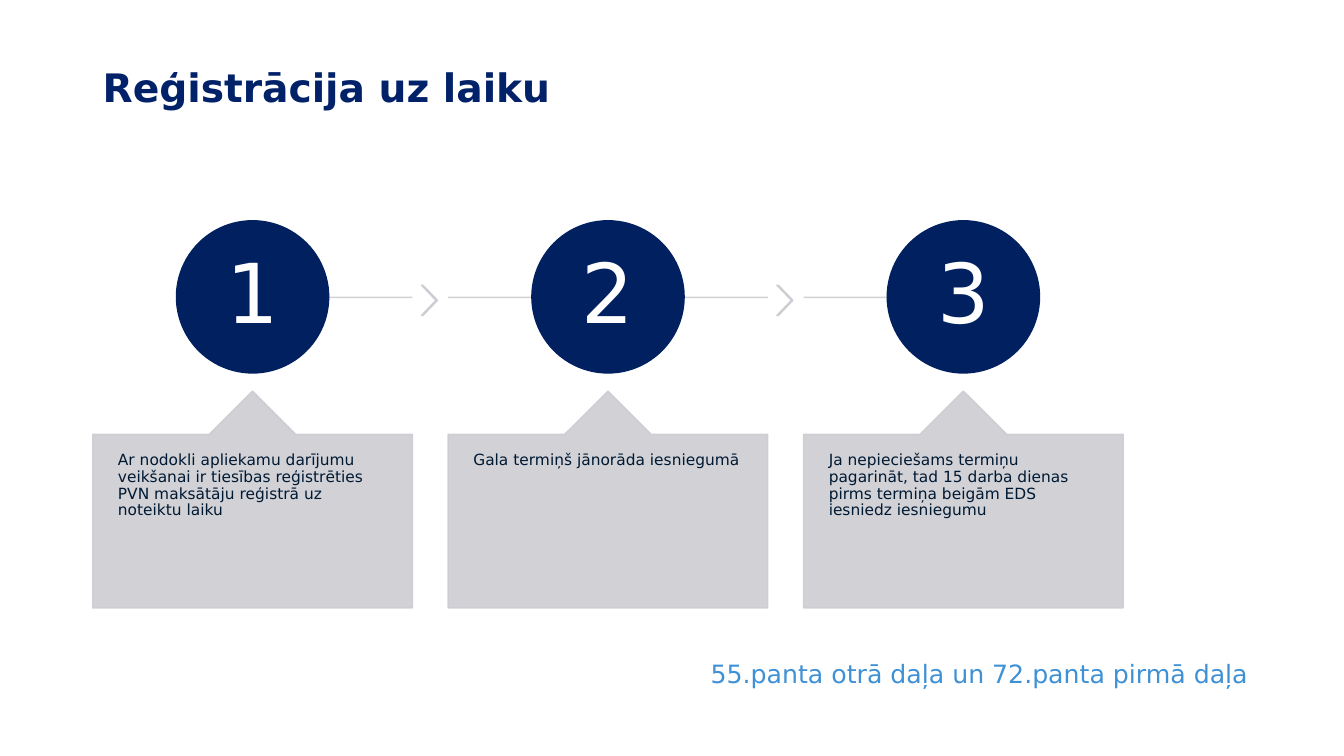
from lxml import etree
from pptx import Presentation
from pptx.dml.color import RGBColor
from pptx.enum.shapes import MSO_CONNECTOR, MSO_SHAPE
from pptx.enum.text import MSO_ANCHOR, MSO_AUTO_SIZE, PP_ALIGN
from pptx.oxml.ns import qn
from pptx.util import Inches, Pt

# Content
TITLE = "Reģistrācija uz laiku"
STEPS = [
    "Ar nodokli apliekamu darījumu veikšanai ir tiesības reģistrēties "
    "PVN maksātāju reģistrā uz noteiktu laiku",
    "Gala termiņš jānorāda iesniegumā",
    "Ja nepieciešams termiņu pagarināt, tad 15 darba dienas pirms termiņa "
    "beigām EDS iesniedz iesniegumu",
]
LEGAL_BASIS = "55.panta otrā daļa un 72.panta pirmā daļa"

# Style
FONT = "DejaVu Sans"
NAVY = RGBColor(0x00, 0x20, 0x60)
TITLE_BLUE = RGBColor(0x01, 0x22, 0x69)
DARK = RGBColor(0x00, 0x19, 0x33)
GREY = RGBColor(0xCC, 0xCD, 0xD2)
SKY = RGBColor(0x3F, 0x91, 0xD5)
WHITE = RGBColor(0xFF, 0xFF, 0xFF)
GREY_OPACITY = 90
ELLIPSE, CHEVRON = MSO_SHAPE.OVAL, MSO_SHAPE.CHEVRON
CALLOUT = MSO_SHAPE.UP_ARROW_CALLOUT
STRAIGHT = MSO_CONNECTOR.STRAIGHT
TOP, MIDDLE = MSO_ANCHOR.TOP, MSO_ANCHOR.MIDDLE
LEFT, CENTER = PP_ALIGN.LEFT, PP_ALIGN.CENTER

# Layout in inches
FIRST_LEFT, LAST_LEFT = 0.92, 7.97
PITCH = (LAST_LEFT - FIRST_LEFT) / (len(STEPS) - 1)
CARD_W, CARD_TOP, CARD_H = 3.17, 3.88, 2.15
TIP_H = 0.2 * CARD_H
CIRCLE_TOP, CIRCLE_D, NUMBER_INSET = 2.19, 1.51, 0.22
LINE_Y = 2.95
CHEVRON_W, CHEVRON_H = 0.16, 0.3

prs = Presentation()
prs.slide_width, prs.slide_height = Inches(13.33), Inches(7.5)
slide = prs.slides.add_slide(prs.slide_layouts[6])


def set_opacity(parent, percent):
    for color in parent.iter(qn("a:srgbClr")):
        etree.SubElement(color, qn("a:alpha"), val=str(percent * 1000))


def add_figure(kind, box, color, adjustments=(), opacity=100):
    figure = slide.shapes.add_shape(kind, *map(Inches, box))
    figure.shadow.inherit = False
    for index, value in enumerate(adjustments):
        figure.adjustments[index] = value
    figure.fill.solid()
    figure.fill.fore_color.rgb = color
    figure.line.color.rgb = color
    figure.line.width = Pt(1)
    if opacity < 100:
        set_opacity(figure._element.spPr, opacity)


def add_rule(start, end):
    rule = slide.shapes.add_connector(
        STRAIGHT, Inches(start), Inches(LINE_Y), Inches(end), Inches(LINE_Y))
    rule.line.color.rgb = GREY
    rule.line.width = Pt(1)
    set_opacity(rule._element.spPr, GREY_OPACITY)
    etree.SubElement(rule._element.spPr, qn("a:effectLst"))


def add_text(text, box, size, color, insets=(0.1, 0.05), anchor=TOP,
             align=LEFT, bold=False, spacing=0.9):
    frame = slide.shapes.add_textbox(*map(Inches, box)).text_frame
    frame.word_wrap = True
    frame.auto_size = MSO_AUTO_SIZE.NONE
    frame.vertical_anchor = anchor
    frame.margin_left = frame.margin_right = Inches(insets[0])
    frame.margin_top = frame.margin_bottom = Inches(insets[1])
    paragraph = frame.paragraphs[0]
    paragraph.alignment = align
    paragraph.line_spacing = spacing
    run = paragraph.add_run()
    run.text = text
    run.font.name = FONT
    run.font.size = Pt(size)
    run.font.bold = bold
    run.font.color.rgb = color


# Numbered steps
for index, step in enumerate(STEPS):
    left = FIRST_LEFT + index * PITCH
    right = left + CARD_W
    center = left + CARD_W / 2
    is_first, is_last = index == 0, index == len(STEPS) - 1

    # Line running behind the circle, and chevron to the next step
    add_rule(center if is_first else left, center if is_last else right)
    if not is_last:
        add_figure(CHEVRON, (right + 0.09, 2.83, CHEVRON_W, CHEVRON_H),
                   GREY, (0.9,), GREY_OPACITY)

    # Circle with number
    circle_left = center - CIRCLE_D / 2
    number_d = CIRCLE_D - 2 * NUMBER_INSET
    add_figure(ELLIPSE, (circle_left, CIRCLE_TOP, CIRCLE_D, CIRCLE_D), NAVY)
    add_text(str(index + 1),
             (circle_left + NUMBER_INSET, CIRCLE_TOP + NUMBER_INSET,
              number_d, number_d),
             59, WHITE, (0.06, 0.06), MIDDLE, CENTER)

    # Callout with explanation
    add_figure(CALLOUT, (left, CARD_TOP, CARD_W, CARD_H), GREY,
               (0.5, 0.2, 0.2, 1), GREY_OPACITY)
    add_text(step, (left, CARD_TOP + TIP_H, CARD_W, CARD_H - TIP_H),
             11, DARK, (0.25, 0.18))

# Title and legal basis
add_text(TITLE, (0.92, 0.4, 10.58, 0.99), 28, TITLE_BLUE,
         anchor=MIDDLE, bold=True)
add_text(LEGAL_BASIS, (6.95, 6.48, 6.03, 0.4), 18, SKY, spacing=1.0)

prs.save("out.pptx")
